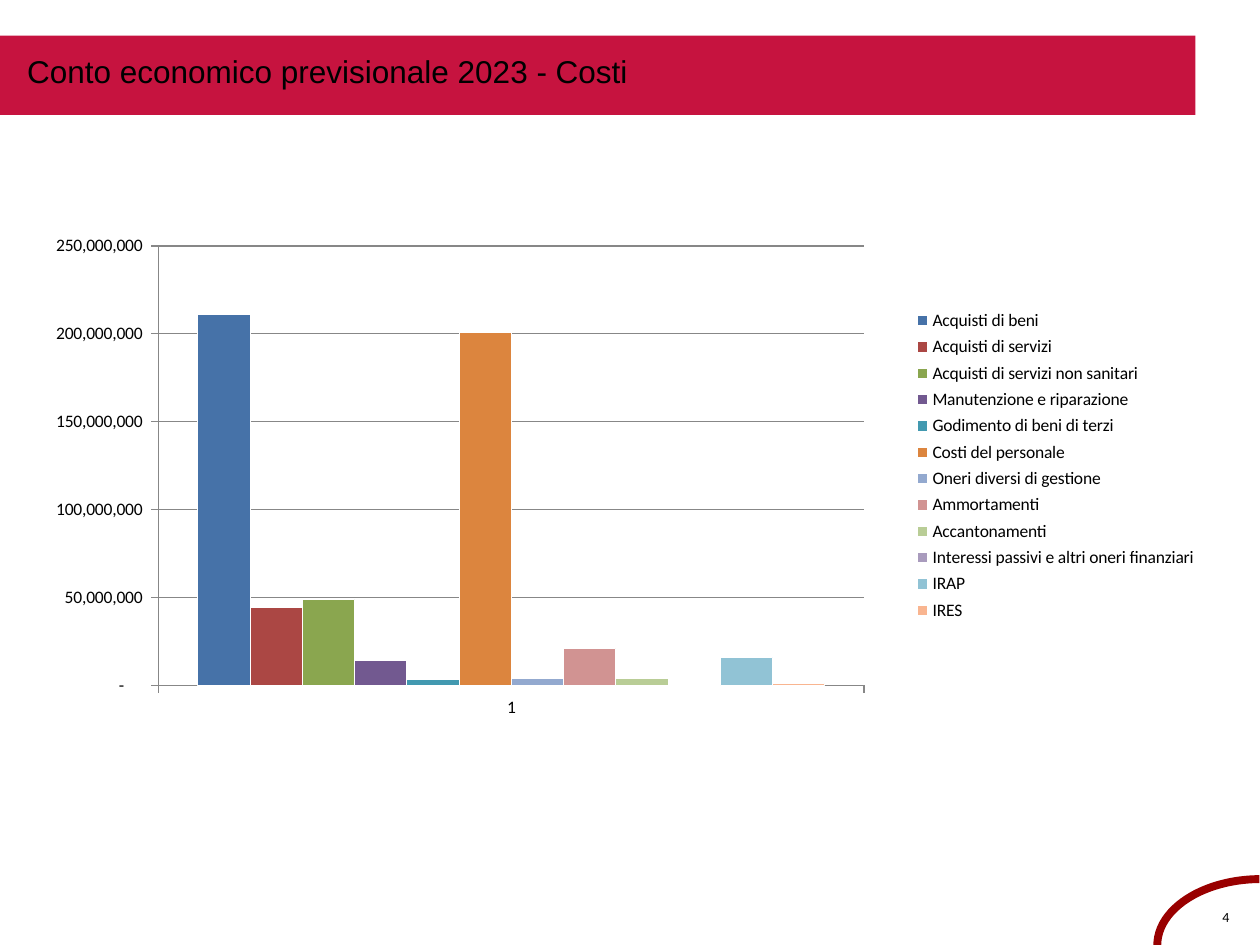
from lxml import etree
from pptx import Presentation, util as u
from pptx.chart.data import CategoryChartData
from pptx.dml.color import RGBColor
from pptx.enum import chart as ch, shapes, text
from pptx.oxml.ns import qn

COSTS = [
    ("Acquisti di beni", 211e6, "4672A8"),
    ("Acquisti di servizi", 44e6, "AB4744"),
    ("Acquisti di servizi non sanitari", 49e6, "8AA64F"),
    ("Manutenzione e riparazione", 14e6, "725990"),
    ("Godimento di beni di terzi", 3e6, "4299B0"),
    ("Costi del personale", 201e6, "DC853E"),
    ("Oneri diversi di gestione", 4e6, "93A9CF"),
    ("Ammortamenti", 21e6, "D19392"),
    ("Accantonamenti", 4e6, "B9CD96"),
    ("Interessi passivi e altri oneri finanziari", 0, "A99BBD"),
    ("IRAP", 16e6, "91C3D5"),
    ("IRES", 1e6, "F9B590"),
]
NUMFMT = '_-* #,##0_-;\\-* #,##0_-;_-* "-"??_-;_-@_-'


def rgb(code):
    return RGBColor.from_string(code)


def cm(*vals):
    return [u.Cm(v) for v in vals]


def assign(obj, fmt):
    for key, val in fmt.items():
        setattr(obj, key, val)


def style(font, name, size):
    assign(font, {"name": name, "size": u.Pt(size)})
    font.color.rgb = rgb("000000")


def stroke(line, code, width):
    line.color.rgb = rgb(code)
    line.width = u.Pt(width)


def label(slide, box, words, name, size, fmt, align=None):
    frame = slide.shapes.add_textbox(*cm(*box)).text_frame
    assign(frame, {"word_wrap": True, **fmt})
    para = frame.paragraphs[0]
    para.text = words
    para.alignment = align
    style(para.runs[0].font, name, size)


def layout(elem, index, box, inner=False):
    """Place a chart part by fractions of the chart area."""
    for old in elem.findall(qn("c:layout")):
        elem.remove(old)
    outer = etree.Element(qn("c:layout"))
    man = etree.SubElement(outer, qn("c:manualLayout"))
    items = [("layoutTarget", "inner")] if inner else []
    items += [("xMode", "edge"), ("yMode", "edge"), *zip("xywh", box)]
    for tag, val in items:
        etree.SubElement(man, qn("c:" + tag)).set("val", str(val))
    elem.insert(index, outer)


def header(slide, x, y, w, h):
    # Red band with the title on it
    band = slide.shapes.add_shape(shapes.MSO_SHAPE.RECTANGLE, *cm(x, y, w, h))
    band.shadow.inherit = False
    band.fill.solid()
    band.fill.fore_color.rgb = rgb("C6133F")
    band.line.fill.background()
    label(slide, (x + 0.3, y + 0.2, 16.2, 1.8),
          "Conto economico previsionale 2023 - Costi", "Arial", 18, {})


def costs(slide, x, y, w, h):
    # One series for each cost item
    data = CategoryChartData(number_format=NUMFMT)
    data.categories = ["1"]
    for name, val, _ in COSTS:
        data.add_series(name, [val])
    chart = slide.shapes.add_chart(
        ch.XL_CHART_TYPE.COLUMN_CLUSTERED, *cm(x, y, w, h), data).chart
    chart.has_title = False
    style(chart.font, "Calibri", 10)
    plot = chart.plots[0]
    assign(plot, {"gap_width": 150, "overlap": 0, "vary_by_categories": False})
    for series, (_, _, code) in zip(plot.series, COSTS):
        series.format.fill.solid()
        series.format.fill.fore_color.rgb = rgb(code)
        stroke(series.format.line, "FFFFFF", 0.5)

    # Axes and gridlines
    value = chart.value_axis
    assign(value, {"minimum_scale": 0, "maximum_scale": 250e6,
                   "major_unit": 50e6, "has_major_gridlines": True})
    assign(value.tick_labels, {"number_format": NUMFMT,
                               "number_format_is_linked": False})
    for axis in (value, chart.category_axis):
        axis.major_tick_mark = ch.XL_TICK_MARK.OUTSIDE
        stroke(axis.format.line, "878787", 0.75)
    stroke(value.major_gridlines.format.line, "878787", 0.75)

    # Legend and plot positions
    chart.has_legend = True
    assign(chart.legend, {"position": ch.XL_LEGEND_POSITION.RIGHT,
                          "include_in_layout": False})
    area = chart.element.find(".//" + qn("c:plotArea"))
    layout(area, 0, (0.1, 0.06, 0.59, 0.83), True)
    layout(area.getparent().find(qn("c:legend")), 1, (0.72, 0.17, 0.26, 0.61))


def corner(slide, x, y, w, h):
    # Quarter arc: the box is upright, then turned to the left
    arc = slide.shapes.add_shape(shapes.MSO_SHAPE.ARC, *cm(x, y, w, h))
    arc.shadow.inherit = False
    arc.adjustments[0], arc.adjustments[1] = 162, 215.34
    arc.rotation = 270
    arc.fill.background()
    stroke(arc.line, "990000", 4.5)
    # Page number
    fmt = dict.fromkeys(("margin_left", "margin_right", "margin_bottom"), 0)
    label(slide, (x + 0.23, y + 1.27, 0.81, 0.41), "4", "Calibri", 8,
          {**fmt, "margin_top": u.Cm(0.08)}, text.PP_ALIGN.CENTER)


def main():
    prs = Presentation()
    prs.slide_width, prs.slide_height = cm(25.4, 19.05)
    slide = prs.slides.add_slide(prs.slide_layouts[6])
    corner(slide, 24.08, 16.97, 2.67, 4.17)
    header(slide, 0, 0.72, 24.1, 1.6)
    costs(slide, 0.79, 4.32, 24.1, 10.67)
    prs.save("out.pptx")


if __name__ == "__main__":
    main()
